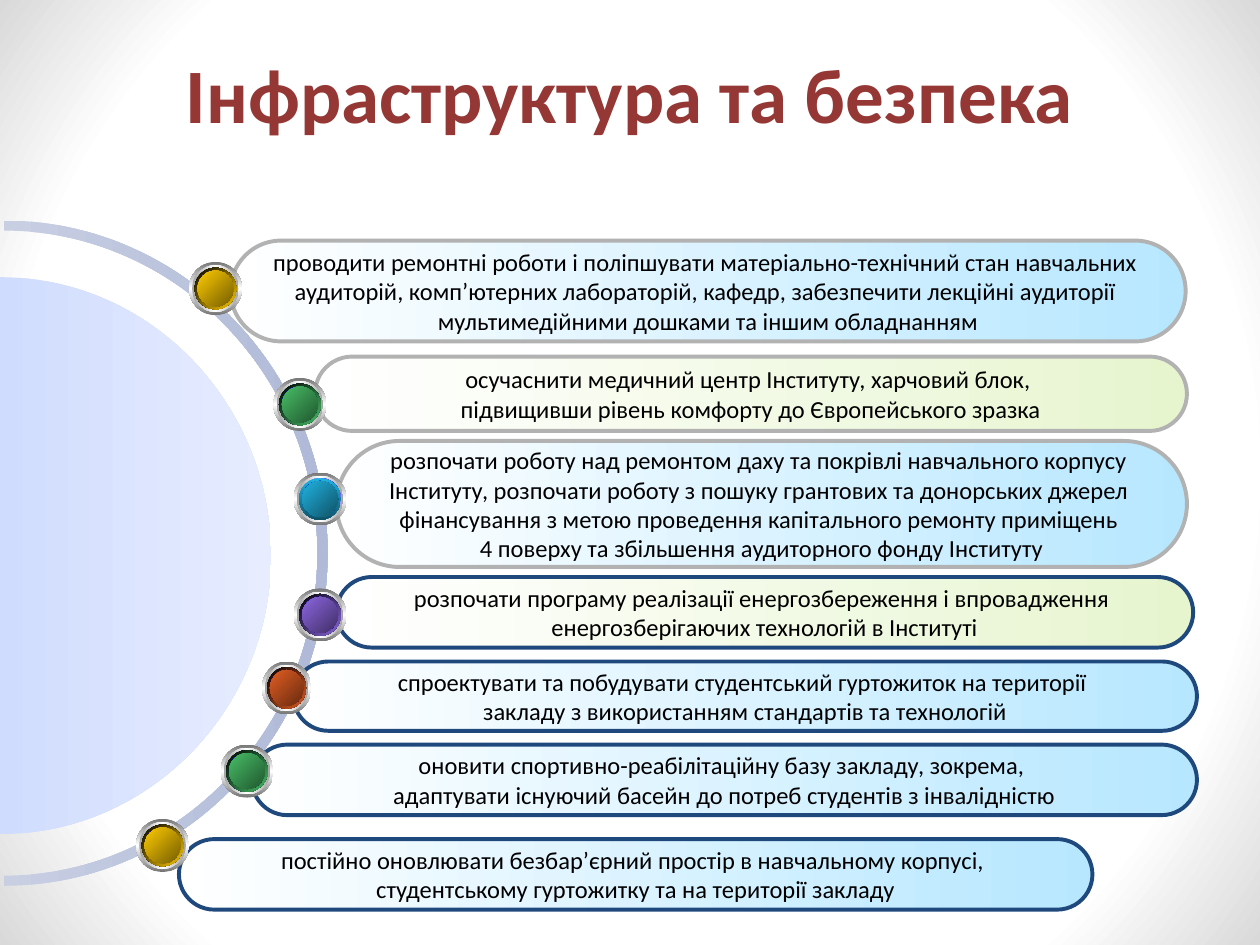
from pptx import Presentation
from pptx.dml.color import RGBColor
from pptx.enum.shapes import MSO_SHAPE
from pptx.enum.text import MSO_ANCHOR, PP_ALIGN
from pptx.oxml import parse_xml
from pptx.oxml.ns import nsdecls, qn
from pptx.util import Inches, Pt

FONT = "Calibri"
SKY, LIME = "B7E7FF", "E7F5CF"
GREY, NAVY = "B2B2B2", "1F497D"
GOLD, GREEN = ("FFCC00", "765E00"), ("48BE67", "21582F")
BLUE = ("21B3E1", "0F5368")

# Bar left, top, width, height, end colour, outline, lines of text
UPPER_BARS = [
    (2.33, 5.25, 7.17, 0.55, SKY, NAVY,
     ["спроектувати та побудувати студентський гуртожиток на території ",
      "закладу з використанням стандартів та технологій"]),
    (2.67, 4.58, 6.8, 0.56, LIME, NAVY,
     ["розпочати програму реалізації енергозбереження і впровадження ",
      "енергозберігаючих технологій в Інституті"]),
    (2.67, 3.5, 6.75, 1, SKY, GREY,
     ["розпочати роботу над ремонтом даху та покрівлі навчального корпусу ",
      "Інституту, розпочати роботу з пошуку грантових та донорських джерел ",
      "фінансування з метою проведення капітального ремонту приміщень ",
      "4 поверху та збільшення аудиторного фонду Інституту"]),
    (2.5, 2.83, 6.92, 0.59, LIME, GREY,
     ["осучаснити медичний центр Інституту, харчовий блок, ",
      "підвищивши рівень комфорту до Європейського зразка"]),
    (1.83, 1.91, 7.58, 0.8, SKY, GREY,
     ["проводити ремонтні роботи і поліпшувати матеріально-технічний стан навчальних ",
      "аудиторій, комп’ютерних лабораторій, кафедр, забезпечити лекційні аудиторії ",
      "мультимедійними дошками та іншим обладнанням"]),
]
LOWER_BARS = [
    (2, 5.91, 7.5, 0.56, SKY, NAVY,
     ["оновити спортивно-реабілітаційну базу закладу, зокрема, ",
      "адаптувати існуючий басейн до потреб студентів з інвалідністю"]),
    (1.42, 6.66, 7.25, 0.56, SKY, NAVY,
     ["постійно оновлювати безбар’єрний простір в навчальному корпусі, ",
      "студентському гуртожитку та на території закладу"]),
]

# Ball left, top, width, light and dark colour
UPPER_BALLS = [
    (1.5, 2.08, 0.42, GOLD),
    (2.17, 3, 0.42, GREEN),
    (2.33, 3.75, 0.42, BLUE),
    (2.33, 4.67, 0.42, ("8D67E1", "412F68")),
    (2.08, 5.25, 0.39, ("E35E23", "692B10")),
]
LOWER_BALLS = [
    (1.08, 6.5, 0.42, GOLD),
    (1.75, 5.91, 0.42, GREEN),
]


def rgb(color):
    return RGBColor.from_string(color)


def shade(shape, stops, angle=None):
    """Fill with (percent, colour) stops: linear, or radial without an angle."""
    shape.shadow.inherit = False
    shape.line.fill.background()
    shape.fill.gradient()
    grad = shape._element.spPr.find(qn("a:gradFill"))
    for child in list(grad):
        grad.remove(child)
    marks = "".join(f'<a:gs pos="{at * 1000}"><a:srgbClr val="{color}"/></a:gs>'
                    for at, color in stops)
    grad.append(parse_xml(f'<a:gsLst {nsdecls("a")}>{marks}</a:gsLst>'))
    if angle is None:
        way = (f'<a:path {nsdecls("a")} path="circle">'
               '<a:fillToRect l="50000" t="50000" r="50000" b="50000"/></a:path>')
    else:
        way = f'<a:lin {nsdecls("a")} ang="{angle * 60000}" scaled="0"/>'
    grad.append(parse_xml(way))


def add_backdrop(slide):
    rect = slide.shapes.add_shape(MSO_SHAPE.RECTANGLE, 0, 0, Inches(10), Inches(7.5))
    shade(rect, [(79, "FFFFFF"), (100, "D9D9D9")])
    slide.shapes._spTree.insert(2, rect._element)


def add_title(slide, text):
    title = slide.shapes.title
    title.left, title.top = Inches(0.5), Inches(0.17)
    title.width, title.height = Inches(9), Inches(1.13)
    frame = title.text_frame
    frame.text = text
    frame.vertical_anchor = MSO_ANCHOR.MIDDLE
    para = frame.paragraphs[0]
    para.alignment = PP_ALIGN.CENTER
    font = para.font
    font.name, font.size, font.bold = FONT, Pt(44), True
    font.color.rgb = rgb("953735")


def arc(x, y, wide, tall):
    """Ends and control points of a right half ellipse, from top to bottom."""
    bend = 0.55
    turns = [(0, -1), (bend, -1), (1, -bend), (1, 0), (1, bend), (bend, 1), (0, 1)]
    return [(x + wide * a, y + tall * b) for a, b in turns]


def add_curve(slide, arcs, start, end):
    """Join half ellipses into one outline, each as two Bezier curves."""
    points = [(Inches(x), Inches(y)) for half in arcs for x, y in half]
    pen = slide.shapes.build_freeform(*points[0])
    pen.add_line_segments(points[1:], close=True)
    shape = pen.convert_to_shape()
    sides = list(shape._element.iter(qn("a:lnTo")))
    for n in range(len(arcs)):
        for at in (7 * n, 7 * n + 3):
            bend = parse_xml(f'<a:cubicBezTo {nsdecls("a")}/>')
            sides[at].addprevious(bend)
            for side in sides[at:at + 3]:
                bend.append(side[0])
                side.getparent().remove(side)
    shade(shape, [(0, start), (100, end)], 0)


def add_bar(slide, left, top, width, height, tint, edge, lines):
    bar = slide.shapes.add_shape(MSO_SHAPE.ROUNDED_RECTANGLE, Inches(left),
                                 Inches(top), Inches(width), Inches(height))
    bar.adjustments[0] = 0.5
    shade(bar, [(0, "FFFFFF"), (100, tint)], 0)
    bar.line.color.rgb = rgb(edge)
    bar.line.width = Pt(2.25)
    frame = bar.text_frame
    frame.word_wrap = False
    frame.vertical_anchor = MSO_ANCHOR.MIDDLE
    frame.text = "\n".join(lines)
    for para in frame.paragraphs:
        para.alignment = PP_ALIGN.CENTER
        para.font.name, para.font.size = FONT, Pt(14)
        para.font.color.rgb = rgb("000000")


def add_ball(slide, left, top, width, colors):
    """Group centred discs, from the metal rim to the coloured face."""
    light, dark = colors
    height = 0.42
    inner = ([light, dark], 90) if colors == BLUE else (["000000", light], 45)
    layers = [
        (1, ["767676", "FFFFFF", "767676"], 90),
        (0.88, ["A3A3A3", "FFFFFF", "A3A3A3"], 0),
        (0.79, ["FFFFFF", "0000FF", "FFFFFF"], 45),
        (0.79, *inner),
        (0.68, ["00008B", "0000FF", "00008B"], 315),
        (0.68, [light, dark], 45),
    ]
    group = slide.shapes.add_group_shape()
    for scale, tones, angle in layers:
        gap = (1 - scale) / 2
        disc = group.shapes.add_shape(
            MSO_SHAPE.OVAL, Inches(left + width * gap), Inches(top + height * gap),
            Inches(width * scale), Inches(height * scale))
        step = 100 // (len(tones) - 1)
        shade(disc, [(i * step, tone) for i, tone in enumerate(tones)], angle)


def main():
    deck = Presentation()
    deck.slide_width, deck.slide_height = Inches(10), Inches(7.5)
    slide = deck.slides.add_slide(deck.slide_layouts[5])
    add_backdrop(slide)
    add_title(slide, "Інфраструктура та безпека")
    outer, inner = arc(0.03, 4.39, 2.57, 2.64), arc(0.03, 4.39, 2.49, 2.56)
    add_curve(slide, [outer, inner[::-1]], "C8CFE3", "B0BAD8")
    add_curve(slide, [arc(0, 4.41, 2.15, 2.21)], "D0DCFE", "E7EDFF")
    for bars, balls in ((UPPER_BARS, UPPER_BALLS), (LOWER_BARS, LOWER_BALLS)):
        for bar in bars:
            add_bar(slide, *bar)
        for ball in balls:
            add_ball(slide, *ball)
    deck.save("out.pptx")


if __name__ == "__main__":
    main()
